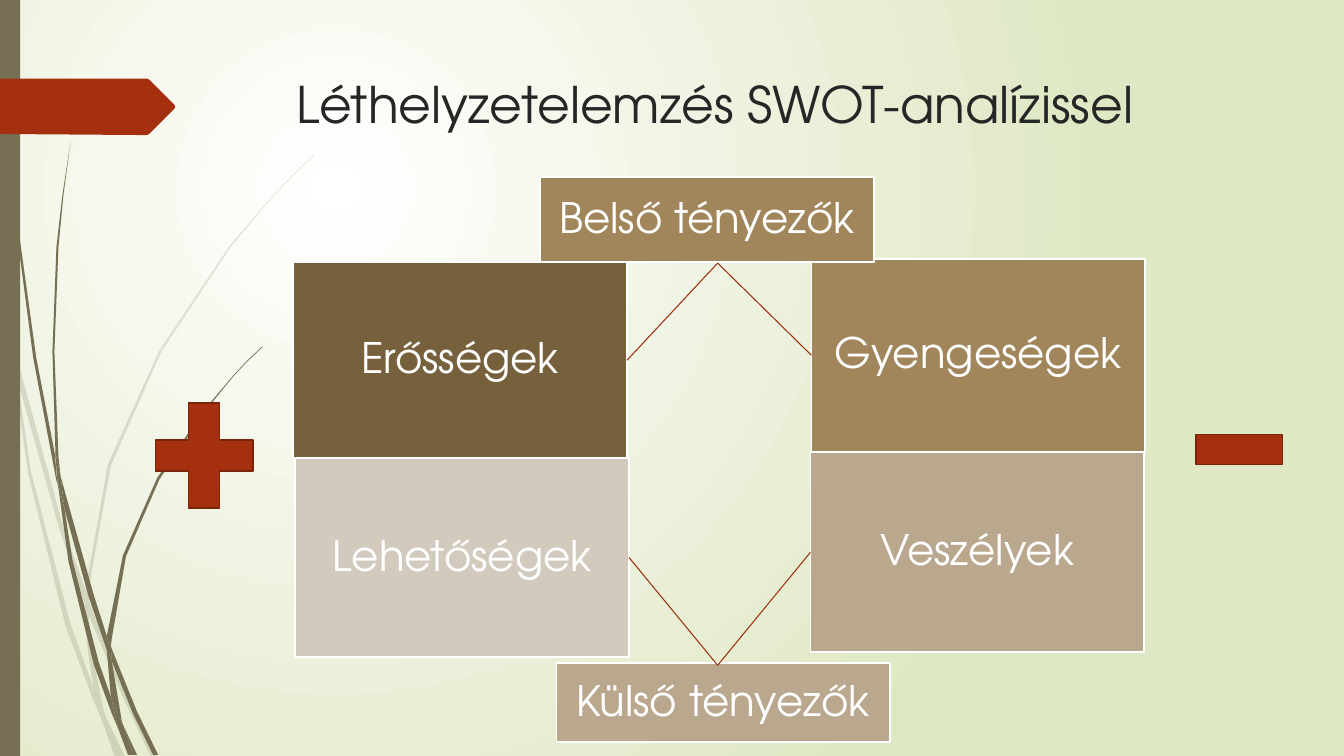
from lxml import etree
from pptx import Presentation
from pptx import util as u
from pptx.dml.color import RGBColor
from pptx.enum import shapes, text
from pptx.oxml.ns import qn

SCALE = 9144
WIDE, HIGH = 1333.33, 750
FONT = "TeX Gyre Adventor"
KIND = shapes.MSO_SHAPE
HUES = {
    "white": "FFFFFF", "lime": "DFE8C4", "olive": "766F54", "rust": "A53010",
    "edge": "7A240C", "link": "9E2E0F", "ink": "262626", "brown": "76613C",
    "tan": "A1865B", "sand": "B9A78E", "pale": "D3CABE",
}

FAINT = [
    [(11, 350), (9, 322), (0, 282), (0, 299), (10, 344)],
    [(58, 522), (84, 599), (85, 586), (62, 520), (14, 345), (17, 376)],
    [(92, 607), (88, 596), (88, 610), (123, 694), (150, 751), (155, 751), (127, 692)],
    [(119, 751), (124, 751), (105, 711)],
    [(93, 683), (70, 619), (31, 469), (17, 376), (11, 350), (28, 470),
     (65, 621), (92, 693), (101, 714), (99, 707)],
    [(84, 599), (87, 646), (93, 683), (96, 692), (105, 711), (103, 706),
     (91, 646), (88, 610), (88, 608)],
    [(88, 584), (110, 462), (160, 349), (229, 245), (268, 198), (290, 175),
     (312, 154), (312, 153), (289, 175), (268, 197), (228, 244), (158, 348),
     (107, 461), (85, 584), (85, 586), (88, 596)],
    [(101, 714), (114, 751), (119, 751)],
    [(88, 608), (88, 610), (88, 596), (85, 586), (84, 599)],
    [(96, 692), (93, 683), (99, 707), (101, 714), (119, 751), (105, 711)],
]
DARK = [
    [(7, 110), (17, 233), (33, 355), (56, 477), (57, 481), (55, 457),
     (55, 453), (36, 355), (19, 232), (8, 109), (5, 48), (4, 0), (3, 0), (4, 48)],
    [(88, 592), (106, 645), (106, 631), (93, 590), (60, 472), (64, 505)],
    [(113, 649), (110, 641), (111, 656), (132, 708), (152, 749), (157, 749), (136, 706)],
    [(110, 691), (98, 657), (72, 556), (64, 505), (57, 477), (68, 557),
     (93, 659), (111, 708), (117, 722), (116, 717)],
    [(60, 472), (58, 453), (54, 349), (58, 245), (63, 193), (70, 141),
     (62, 193), (56, 245), (52, 349), (55, 449)],
    [(133, 749), (136, 749), (122, 719)],
    [(57, 477), (64, 505), (60, 472), (55, 449), (55, 453)],
    [(111, 633), (125, 552), (158, 476), (205, 406), (231, 374), (245, 359),
     (261, 344), (260, 344), (245, 358), (231, 373), (204, 405), (156, 474),
     (122, 551), (106, 631), (110, 641)],
    [(117, 722), (127, 749), (131, 749)],
    [(106, 645), (110, 691), (116, 706), (122, 719), (121, 716), (111, 656), (109, 651)],
    [(106, 645), (109, 651), (111, 656), (110, 641), (106, 631), (106, 633)],
    [(116, 706), (110, 691), (116, 717), (117, 722), (130, 749), (133, 749), (122, 719)],
]
TAG = [(173, 108), (148, 133), (146, 134), (136, 134), (0, 133), (0, 78),
       (136, 78), (146, 78), (148, 79), (173, 104), (174, 106)]


def px(*nums):
    return [u.Emu(round(n * SCALE)) for n in nums]


def hue(name):
    return RGBColor.from_string(HUES[name])


def apply(item, form):
    for key, value in form.items():
        setattr(item, key, value)


def paint(shape, fill, line=None):
    shape.shadow.inherit = False
    shape.fill.solid()
    shape.fill.fore_color.rgb = hue(fill)
    if line:
        shape.line.color.rgb = hue(line)
        shape.line.width = u.Pt(1.25)
    else:
        shape.line.fill.background()


def block(slide, kind, box, fill, line=None):
    shape = slide.shapes.add_shape(kind, *px(*box))
    paint(shape, fill, line)
    return shape


def trace(home, dots, fill):
    first, *rest = [px(*dot) for dot in dots]
    pen = home.shapes.build_freeform(*first)
    pen.add_line_segments(rest, close=True)
    shape = pen.convert_to_shape()
    paint(shape, fill)
    return shape


def write(shape, words, size, color, frame, para):
    body = shape.text_frame
    apply(body, {"word_wrap": True, **frame})
    line = body.paragraphs[0]
    apply(line, para)
    run = line.add_run()
    run.text = words
    apply(run.font, {"name": FONT, "size": u.Pt(size)})
    run.font.color.rgb = hue(color)


def backdrop(slide):
    fill = slide.background.fill
    fill.gradient()
    for stop, name in zip(fill.gradient_stops, ("white", "lime")):
        stop.color.rgb = hue(name)
    grad = slide.background._cSld.find(".//" + qn("a:gradFill"))
    grad.remove(grad.find(qn("a:lin")))
    way = etree.SubElement(grad, qn("a:path"), {"path": "circle"})
    sides = {"l": "50000", "t": "50000", "r": "100000", "b": "100000"}
    etree.SubElement(way, qn("a:fillToRect"), sides)


def grass(slide, blades, alpha=None):
    group = slide.shapes.add_group_shape()
    for dots in blades:
        blade = trace(group, dots, "olive")
        if alpha:
            color = blade._element.spPr.find(".//" + qn("a:srgbClr"))
            etree.SubElement(color, qn("a:alpha"), {"val": str(alpha * 1000)})


def margin(slide):
    grass(slide, FAINT, 20)
    grass(slide, DARK)
    block(slide, KIND.RECTANGLE, (0, 0, 20, HIGH), "olive")
    trace(slide, TAG, "rust")


def heading(slide, box):
    shape = slide.shapes.add_textbox(*px(*box))
    write(shape, "Léthelyzetelemzés SWOT-analízissel", 36, "ink", {}, {})


def link(slide, spot, target, side):
    line = slide.shapes.add_connector(shapes.MSO_CONNECTOR.STRAIGHT, *px(*spot, *spot))
    line.end_connect(target, side)
    line.line.color.rgb = hue("link")
    line.line.width = u.Pt(0.75)
    etree.SubElement(line._element.spPr, qn("a:effectLst"))


def swot(slide, box):
    x, y = box
    wide, pad = 331, px(12)[0]
    frame = {"vertical_anchor": text.MSO_ANCHOR.MIDDLE, "margin_left": pad,
             "margin_right": pad, "margin_top": pad, "margin_bottom": pad}
    para = {"alignment": text.PP_ALIGN.CENTER, "line_spacing": 0.9}
    cells = {}
    for words, left, top, high, fill in (
        ("Erősségek", 0, 84, 195, "brown"),
        ("Gyengeségek", 514, 81, 191, "tan"),
        ("Külső tényezők", 261, 482, 78, "sand"),
        ("Lehetőségek", 2, 278, 198, "pale"),
        ("Veszélyek", 513, 273, 198, "sand"),
        ("Belső tényezők", 245, 0, 84, "tan"),
    ):
        cell = block(slide, KIND.RECTANGLE, (x + left, y + top, wide, high), fill, "white")
        write(cell, words, 30, "white", frame, para)
        cells[words] = cell
    for words, top, side in (("Veszélyek", 484, 1), ("Lehetőségek", 484, 3),
                             ("Erősségek", 85, 3), ("Gyengeségek", 85, 1)):
        link(slide, (x + 421, y + top), cells[words], side)


def signs(slide):
    block(slide, KIND.MATH_PLUS, (137, 381, 131, 142), "rust", "edge")
    block(slide, KIND.MATH_MINUS, (1171, 383, 117, 126), "rust", "edge")


def main():
    deck = Presentation()
    deck.slide_width, deck.slide_height = px(WIDE, HIGH)
    slide = deck.slides.add_slide(deck.slide_layouts[6])
    backdrop(slide)
    margin(slide)
    heading(slide, (284, 68, 975, 140))
    swot(slide, (291, 176))
    signs(slide)
    deck.save("out.pptx")


if __name__ == "__main__":
    main()
